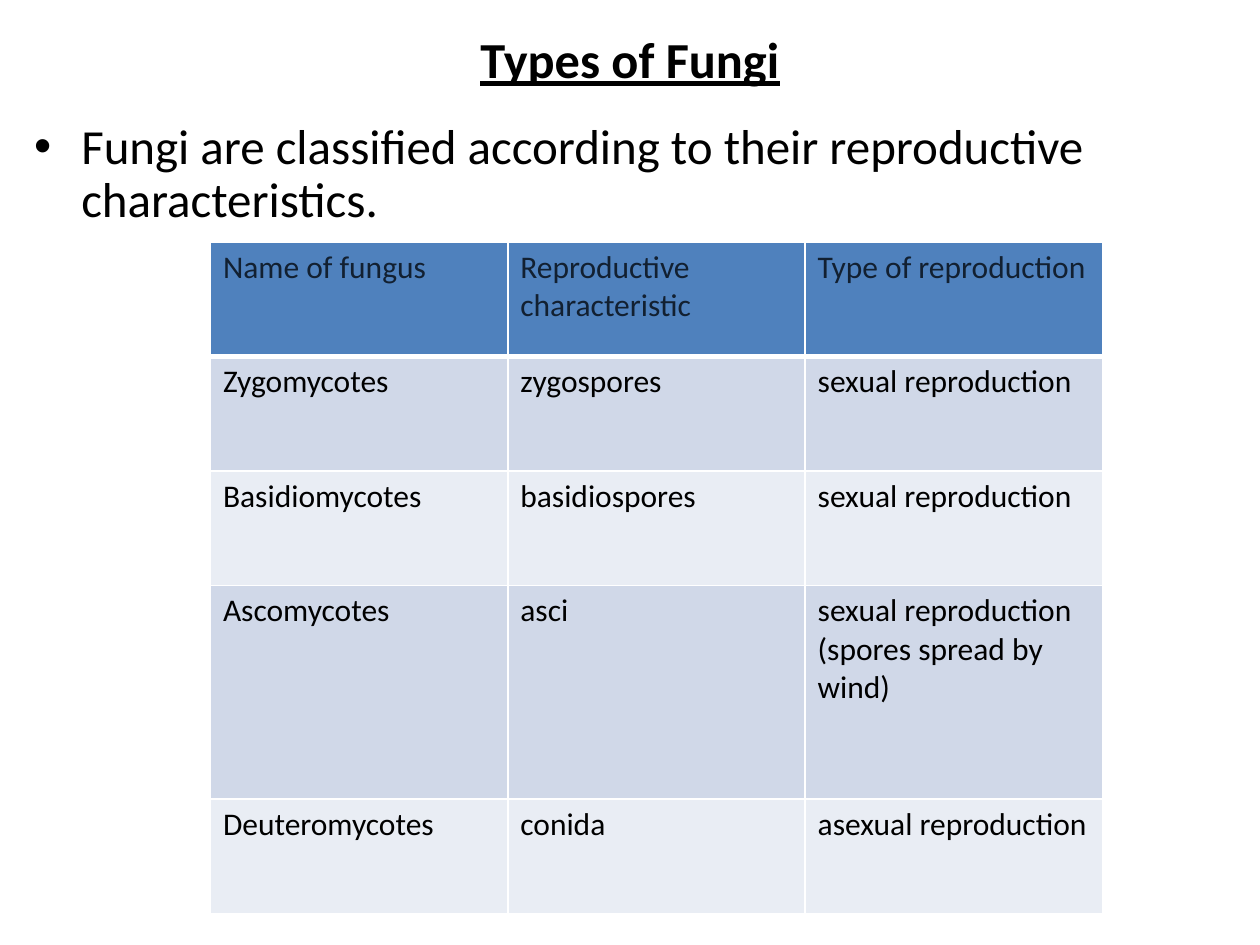
from dataclasses import dataclass

from lxml.etree import SubElement
from pptx import Presentation
from pptx.dml.color import RGBColor
from pptx.enum.text import MSO_ANCHOR, MSO_AUTO_SIZE, PP_ALIGN
from pptx.oxml.ns import qn
from pptx.util import Inches, Pt

WIDE, HIGH = 10, 7.5
FONT = "Calibri"
BLACK, WHITE = "000000", "FFFFFF"
HEAD_FILL, HEAD_INK = "4F81BD", "122031"
BANDS = ("E9EDF4", "D0D8E8")


@dataclass(frozen=True)
class Box:
    """A place given as shares of the slide's width and height."""
    left: float
    top: float
    width: float
    height: float

    def rect(self) -> tuple:
        return (Inches(self.left * WIDE), Inches(self.top * HIGH),
                Inches(self.width * WIDE), Inches(self.height * HIGH))


@dataclass(frozen=True)
class Fungus:
    name: str
    trait: str
    mode: str
    share: int = 15  # row height, in hundredths of the table's units

    def cells(self) -> tuple:
        return self.name, self.trait, self.mode


TITLE = Box(0.05, 0.023, 0.9, 0.077)
BODY = Box(0.017, 0.123, 0.967, 0.189)
GRID = Box(0.167, 0.256, 0.708, 0.711)

ROWS = (
    Fungus("Name of fungus", "Reproductive characteristic", "Type of reproduction"),
    Fungus("Zygomycotes", "zygospores", "sexual reproduction"),
    Fungus("Basidiomycotes", "basidiospores", "sexual reproduction"),
    Fungus("Ascomycotes", "asci", "sexual reproduction (spores spread by wind)", 28),
    Fungus("Deuteromycotes", "conida", "asexual reproduction"),
)


def color(code: str) -> RGBColor:
    return RGBColor.from_string(code)


def write(frame, text: str, *, size: float, ink: str = BLACK, bold: bool = False,
          under: bool = False, align=PP_ALIGN.LEFT, lead: float = 1.0) -> None:
    line = frame.paragraphs[0]
    line.alignment, line.line_spacing = align, lead
    run = line.add_run()
    run.text = text
    font = run.font
    font.name, font.size, font.bold, font.underline = FONT, Pt(size), bold, under
    font.color.rgb = color(ink)


def place(shape, box: Box, anchor):
    """Move a placeholder and return its text frame."""
    shape.left, shape.top, shape.width, shape.height = box.rect()
    frame = shape.text_frame
    frame.word_wrap = True
    frame.auto_size = MSO_AUTO_SIZE.NONE
    frame.vertical_anchor = anchor
    return frame


def edge(cell, widths: dict) -> None:
    """Draw white cell borders; they must come before the fill."""
    props = cell._tc.get_or_add_tcPr()
    for side, width in widths.items():
        line = SubElement(props, qn(f"a:ln{side}"), w=str(Pt(width)))
        fill = SubElement(line, qn("a:solidFill"))
        SubElement(fill, qn("a:srgbClr"), val=WHITE)


def draw_table(slide, rows: tuple, box: Box) -> None:
    count = len(rows[0].cells())
    table = slide.shapes.add_table(len(rows), count, *box.rect()).table
    total = sum(row.share for row in rows)
    for col in table.columns:
        col.width = Inches(box.width * WIDE / count)
    for r, row in enumerate(rows):
        head = r == 0
        table.rows[r].height = Inches(box.height * HIGH * row.share / total)
        for c, text in enumerate(row.cells()):
            cell = table.cell(r, c)
            edge(cell, {"L": 1, "R": 1, "T": 1, "B": 3 if head else 1})
            cell.fill.solid()
            cell.fill.fore_color.rgb = color(HEAD_FILL if head else BANDS[r % 2])
            write(cell.text_frame, text, size=18, ink=HEAD_INK if head else BLACK)


def main() -> None:
    deck = Presentation()
    deck.slide_width, deck.slide_height = Inches(WIDE), Inches(HIGH)
    slide = deck.slides.add_slide(deck.slide_layouts[1])
    title, body = slide.placeholders
    write(place(title, TITLE, MSO_ANCHOR.MIDDLE), "Types of Fungi",
          size=28.8, bold=True, under=True, align=PP_ALIGN.CENTER)
    write(place(body, BODY, MSO_ANCHOR.TOP),
          "Fungi are classified according to their reproductive characteristics.",
          size=28, lead=0.9)
    draw_table(slide, ROWS, GRID)
    deck.save("out.pptx")


if __name__ == "__main__":
    main()
